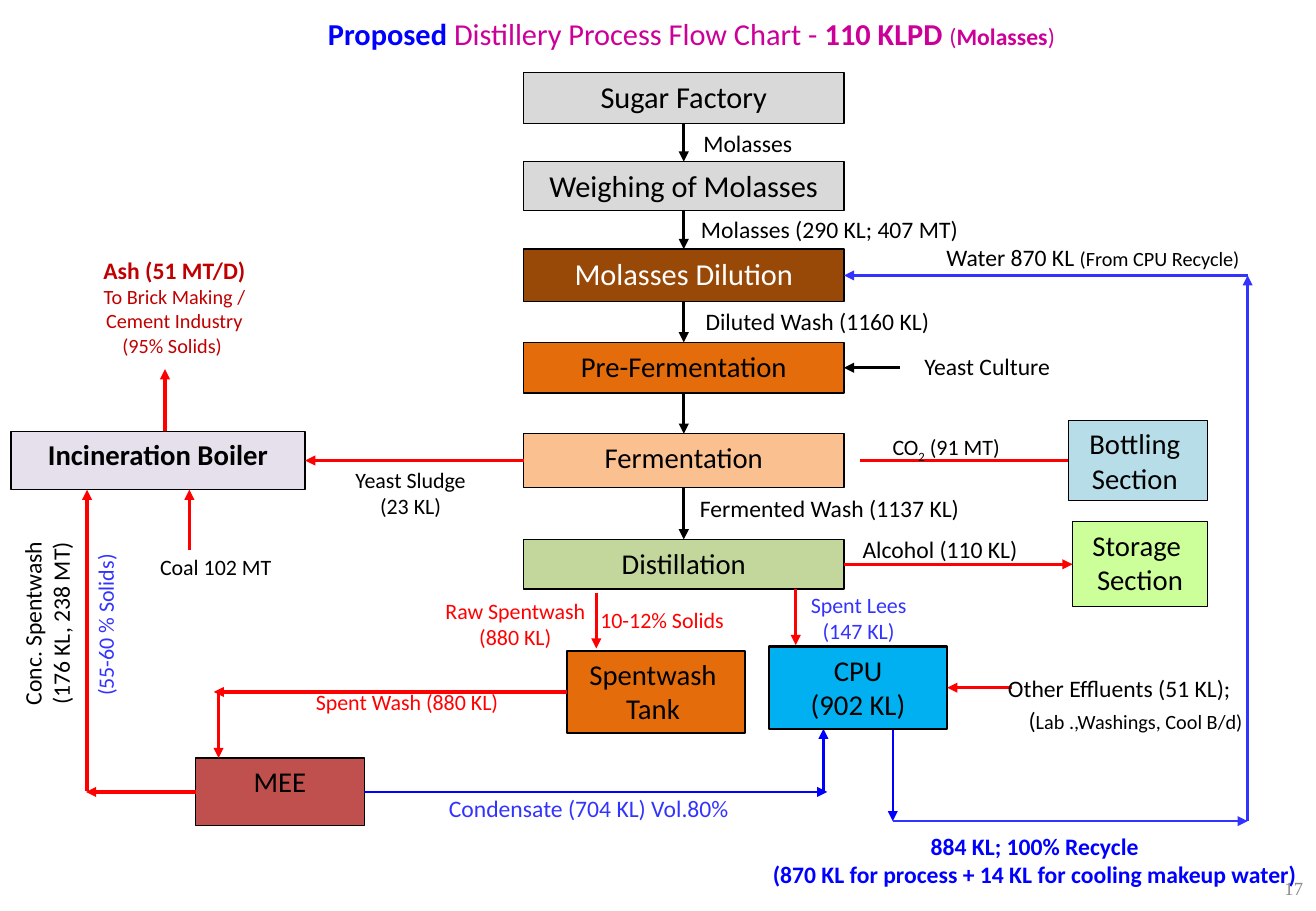
from collections import namedtuple
from dataclasses import dataclass
from typing import Any

from lxml.etree import SubElement
from pptx import Presentation
from pptx.dml.color import RGBColor
from pptx.enum.shapes import MSO_CONNECTOR, MSO_SHAPE
from pptx.enum.text import MSO_ANCHOR, PP_ALIGN
from pptx.oxml.ns import qn
from pptx.util import Cm, Pt

BLACK = RGBColor(0x00, 0x00, 0x00)
WHITE = RGBColor(0xFF, 0xFF, 0xFF)
RED = RGBColor(0xFF, 0x00, 0x00)
DARK_RED = RGBColor(0xC0, 0x00, 0x00)
BLUE = RGBColor(0x00, 0x00, 0xFF)
SOFT_BLUE = RGBColor(0x33, 0x33, 0xFF)
MAGENTA = RGBColor(0xCC, 0x00, 0x99)
NUMBER_GREY = RGBColor(0x89, 0x89, 0x89)
GREY = RGBColor(0xD9, 0xD9, 0xD9)
BROWN = RGBColor(0x98, 0x48, 0x07)
ORANGE = RGBColor(0xE4, 0x6C, 0x0A)
PEACH = RGBColor(0xFA, 0xC0, 0x90)
OLIVE = RGBColor(0xC3, 0xD6, 0x9B)
LILAC = RGBColor(0xE6, 0xE0, 0xEC)
CYAN = RGBColor(0x00, 0xB0, 0xF0)
LIME = RGBColor(0xCC, 0xFF, 0x99)
PALE_BLUE = RGBColor(0xB7, 0xDE, 0xE8)
BRICK = RGBColor(0xC0, 0x50, 0x4D)

TOP, LEFT, BOTTOM, RIGHT = range(4)
Joint = namedtuple("Joint", "block side")
Run = namedtuple("Run", "text size color bold baseline", defaults=(BLACK, False, None))


def write(frame, lines, align=PP_ALIGN.CENTER, font="Calibri"):
    """Write one paragraph per list of runs."""
    frame.word_wrap = True
    for index, runs in enumerate(lines):
        paragraph = frame.add_paragraph() if index else frame.paragraphs[0]
        paragraph.alignment = align
        for part in runs:
            run = paragraph.add_run()
            run.text = part.text
            run.font.name = font
            run.font.size = Pt(part.size)
            run.font.bold = part.bold
            run.font.color.rgb = part.color
            if part.baseline:
                run._r.get_or_add_rPr().set("baseline", str(part.baseline))


def plain(text, size, color=BLACK, bold=False):
    """Turn each line of the text into a list with one run."""
    return [[Run(line, size, color, bold)] for line in text.split("\n")]


@dataclass
class Region:
    """A part of the slide that places its contents from its corner, in cm."""

    slide: Any
    left: float
    top: float

    def point(self, x, y):
        """Turn a place in the region into a place on the slide."""
        return Cm(self.left + x), Cm(self.top + y)

    def block(self, text, x, y, width, height, fill, size=17, color=BLACK, bold=False, border=0.75):
        """Draw a process step as a bordered rectangle."""
        step = self.slide.shapes.add_shape(
            MSO_SHAPE.RECTANGLE, *self.point(x, y), Cm(width), Cm(height))
        step.shadow.inherit = False
        step.fill.solid()
        step.fill.fore_color.rgb = fill
        step.line.color.rgb = BLACK
        step.line.width = Pt(border)
        step.text_frame.vertical_anchor = MSO_ANCHOR.TOP
        write(step.text_frame, plain(text, size, color, bold))
        return step

    def label(self, lines, x, y, width, height=None, align=PP_ALIGN.CENTER, upward=False):
        """Write a caption, turned to read upward if asked."""
        height = height or 0.25 + 0.6 * len(lines)
        caption = self.slide.shapes.add_textbox(*self.point(x, y), Cm(width), Cm(height))
        write(caption.text_frame, lines, align)
        if upward:
            caption.text_frame._txBody.bodyPr.set("vert", "vert270")
        return caption

    def flow(self, start, end, color=RED, width=2):
        """Draw an arrow between two points or joints."""
        places = [(0, 0) if isinstance(p, Joint) else self.point(*p) for p in (start, end)]
        stream = self.slide.shapes.add_connector(MSO_CONNECTOR.STRAIGHT, *places[0], *places[1])
        if isinstance(start, Joint):
            stream.begin_connect(*start)
        if isinstance(end, Joint):
            stream.end_connect(*end)
        stream.line.color.rgb = color
        stream.line.width = Pt(width)
        SubElement(stream.line._get_or_add_ln(), qn("a:tailEnd"), type="triangle")
        SubElement(stream._element.spPr, qn("a:effectLst"))


def add_title(slide, left, top):
    """Fill the title placeholder."""
    title = slide.shapes.title
    title.left, title.top, title.width, title.height = Cm(left), Cm(top), Cm(19.58), Cm(1.02)
    title.text_frame.vertical_anchor = MSO_ANCHOR.TOP
    write(title.text_frame, [[
        Run("Proposed ", 18, BLUE, True),
        Run("Distillery Process Flow Chart - ", 18, MAGENTA),
        Run("110 KLPD ", 18, MAGENTA, True),
        Run("(", 14, MAGENTA),
        Run("Molasses", 14, MAGENTA, True),
        Run(")", 14, MAGENTA),
    ]])


def add_process(region):
    """Draw the central column and return its steps by name."""
    steps = {}
    for name, y, height, fill, size, color in (
        ("Sugar Factory", 0, 1.06, GREY, 18, BLACK),
        ("Weighing of Molasses", 1.86, 1.02, GREY, 18, BLACK),
        ("Molasses Dilution", 3.69, 1.1, BROWN, 18, WHITE),
        ("Pre-Fermentation", 5.64, 1.06, ORANGE, 17, BLACK),
        ("Fermentation", 7.55, 1.12, PEACH, 17, BLACK),
        ("Distillation", 9.76, 1.04, OLIVE, 17, BLACK),
    ):
        steps[name] = region.block(name, 0, y, 6.7, height, fill, size, color)
    column = list(steps.values())
    for upper, lower in zip(column, column[1:]):
        region.flow(Joint(upper, BOTTOM), Joint(lower, TOP), BLACK)
    for text, x, y, width in (
        ("Molasses", 3.1, 1.05, 3.18),
        ("Molasses (290 KL; 407 MT)", 2.36, 2.85, 8.08),
        ("Diluted Wash (1160 KL)", 3.2, 4.78, 5.89),
        ("Fermented Wash (1137 KL)", 2.77, 8.69, 7.26),
        ("Yeast Culture", 7.64, 5.72, 4.11),
    ):
        region.label(plain(text, 14), x, y, width)
    region.flow((7.87, 6.17), Joint(steps["Pre-Fermentation"], RIGHT), BLACK, 1.5)
    return steps


def add_products(region, distillation):
    """Draw the bottling and storage sections with their inflows."""
    region.flow((0.68, 0.84), (5.41, 0.84))
    region.block("Bottling \nSection ", 5.05, 0, 2.9, 1.68, PALE_BLUE)
    storage = region.block("Storage \nSection", 5.13, 2.12, 2.82, 1.78, LIME)
    region.flow(Joint(distillation, RIGHT), Joint(storage, LEFT))
    region.label([[Run("CO", 13), Run("2", 13, baseline=-25000), Run(" (91 MT)", 13)]],
                 0.86, 0.16, 3.25)
    region.label(plain("Alcohol (110 KL)", 14), 0, 2.28, 4.72)


def add_boiler(region, fermentation):
    """Draw the incineration boiler with its inputs and ash."""
    boiler = region.block("Incineration Boiler", 0, 3.82, 6.15, 1.22, LILAC, bold=True)
    region.flow(Joint(fermentation, LEFT), Joint(boiler, RIGHT))
    region.flow((3.22, 3.82), (3.22, 2.52))
    region.flow((3.73, 6.31), (3.73, 5.04))
    region.flow((1.59, 11.34), (1.59, 5.04))
    ash = plain("Ash (51 MT/D)", 14, DARK_RED, True)
    ash += plain("To Brick Making /\nCement Industry\n(95% Solids) ", 12, DARK_RED)
    region.label(ash, 0.46, 0.03, 5.92)
    region.label(plain("Coal 102 MT", 13), 2.21, 6.26, 4.14)
    region.label(plain("Yeast Sludge\n(23 KL)", 13), 6.27, 4.43, 4.17)
    region.label(plain("Conc. Spentwash \n(176 KL, 238 MT)", 14), 0.02, 5.87, 1.7, 3.94, upward=True)
    region.label(plain("(55-60 % Solids) ", 13, SOFT_BLUE), 1.57, 5.85, 1.09, 3.94, upward=True)


def add_evaporation(region):
    """Draw the spentwash tank, the evaporator and their streams."""
    tank = region.block("Spentwash \nTank ", 7.77, 1.24, 3.73, 1.72, ORANGE, border=1.25)
    evaporator = region.block("MEE", 0, 3.48, 3.53, 1.42, BRICK)
    region.flow((8.38, 0.03), (8.38, 1.19))
    region.flow(Joint(tank, LEFT), (0.38, 2.1))
    region.flow((0.48, 2.1), (0.48, 3.48))
    region.flow(Joint(evaporator, LEFT), (-2.29, 4.19))
    region.flow(Joint(evaporator, RIGHT), (13.21, 4.19), BLUE, 1.5)
    region.flow((13.13, 4.19), (13.13, 2.87), BLUE, 1.5)
    region.label(plain("Raw Spentwash\n(880 KL)", 13, RED), 4.88, 0, 3.61)
    region.label(plain("10-12% Solids ", 13, RED), 8.18, 0.2, 3.25)
    region.label(plain("Spent Wash (880 KL)", 13, RED), 1.27, 1.9, 6.3)
    region.label(plain("Condensate (704 KL) Vol.80%", 14, SOFT_BLUE), 4.7, 4.11, 7.05)


def add_treatment(region):
    """Draw the CPU with its spent lees and other effluents."""
    cpu = region.block("CPU\n(902 KL)", 0.18, 1.28, 3.73, 1.72, CYAN, border=1.25)
    region.flow((0.74, 0.08), (0.74, 1.25))
    region.flow((5.26, 2.14), Joint(cpu, RIGHT))
    region.label(plain("Spent Lees\n(147 KL)", 13, SOFT_BLUE), 0, 0, 4.11)
    effluents = region.label(
        [[Run("Other Effluents (51 KL);", 14)],
         [Run("(", 14), Run("Lab .,Washings, Cool B/d)", 12)]],
        4.93, 1.73, 6.3, align=PP_ALIGN.LEFT)
    detail = effluents.text_frame.paragraphs[1]
    detail.space_before = Pt(2)
    detail._p.get_or_add_pPr().set("marL", str(Cm(0.43)))


def add_recycle(region, dilution):
    """Draw the recycled water loop back to the dilution step."""
    region.flow((0, 10.32), (0, 12.22), BLUE, 1.5)
    corners = [(0, 12.22), (7.42, 12.22), (7.42, 0.81), Joint(dilution, RIGHT)]
    for start, end in zip(corners, corners[1:]):
        region.flow(start, end, SOFT_BLUE, 1.5)
    region.label([[Run("Water 870 KL ", 14), Run("(From CPU Recycle)", 12)]],
                 0.87, 0, 7.9, align=PP_ALIGN.LEFT)
    total = "884 KL; 100% Recycle\n(870 KL for process + 14 KL for cooling makeup water)"
    region.label(plain(total, 14, BLUE, True), -2.88, 12.32, 11.7)


def add_page_number(slide, left, top):
    """Write the page number."""
    number = slide.shapes.add_textbox(Cm(left), Cm(top), Cm(1.01), Cm(0.61))
    number.text_frame.vertical_anchor = MSO_ANCHOR.MIDDLE
    write(number.text_frame, plain("17", 11, NUMBER_GREY), PP_ALIGN.RIGHT, "Times New Roman")


def main():
    """Build the flow chart slide."""
    deck = Presentation()
    deck.slide_width, deck.slide_height = Cm(27.52), Cm(19.05)
    slide = deck.slides.add_slide(deck.slide_layouts[5])
    add_title(slide, 4.67, 0.18)
    steps = add_process(Region(slide, 10.95, 1.52))
    add_products(Region(slide, 17.3, 8.79), steps["Distillation"])
    add_boiler(Region(slide, 0.23, 5.2), steps["Fermentation"])
    add_evaporation(Region(slide, 4.09, 12.37))
    add_treatment(Region(slide, 15.9, 12.24))
    add_recycle(Region(slide, 18.67, 4.95), steps["Molasses Dilution"])
    add_page_number(slide, 26.49, 18.26)
    deck.save("out.pptx")


if __name__ == "__main__":
    main()
